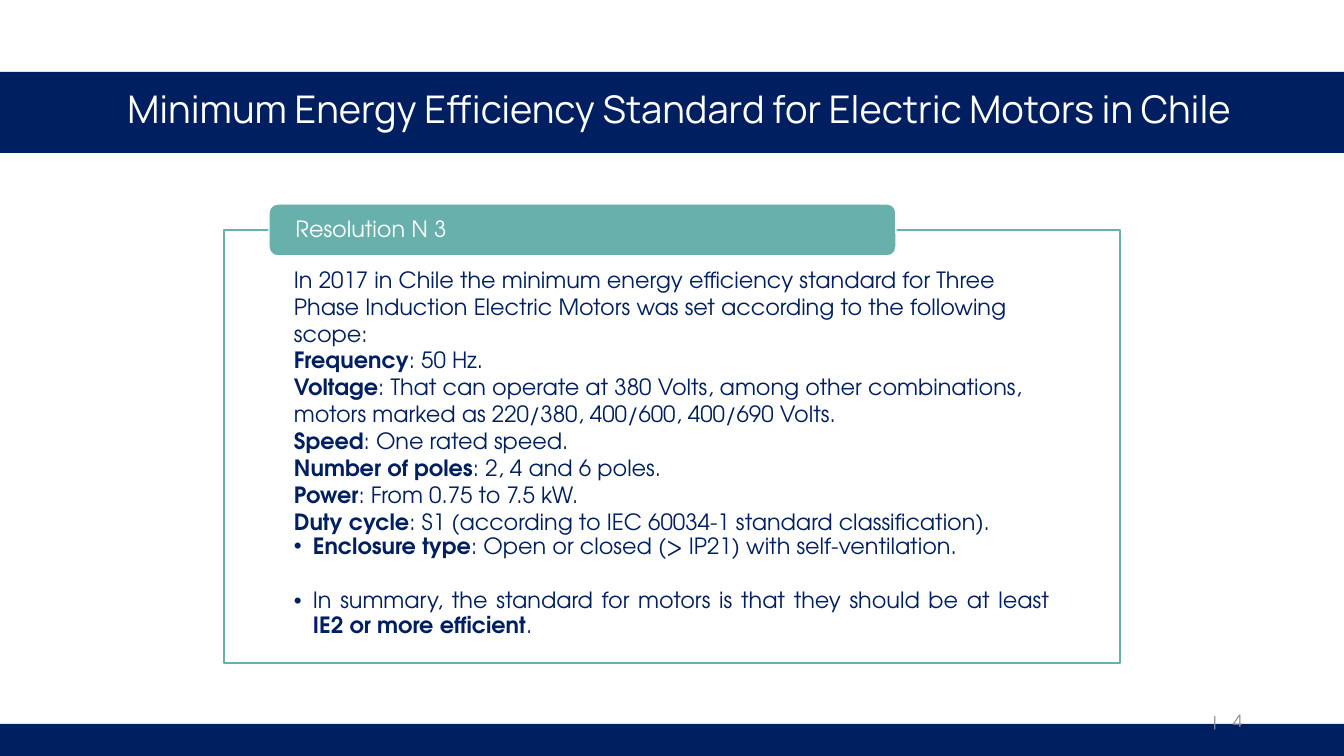
from lxml import etree
from pptx import Presentation
from pptx.dml.color import RGBColor
from pptx.enum.shapes import MSO_SHAPE
from pptx.enum.text import MSO_ANCHOR, PP_ALIGN
from pptx.oxml.ns import qn
from pptx.util import Emu, Pt

RECTANGLE, ROUNDED = MSO_SHAPE.RECTANGLE, MSO_SHAPE.ROUNDED_RECTANGLE
TOP, MIDDLE = MSO_ANCHOR.TOP, MSO_ANCHOR.MIDDLE
LEFT, CENTER, JUSTIFY = PP_ALIGN.LEFT, PP_ALIGN.CENTER, PP_ALIGN.JUSTIFY

TITLE = "Minimum Energy Efficiency Standard for Electric Motors in Chile"
HEADING = "Resolution N 3"
PAGE_NUMBER = "|\t4"
INTRO = ("In 2017 in Chile the minimum energy efficiency standard for Three Phase "
         "Induction Electric Motors was set according to the following scope:")
SCOPE = [
    ("Frequency", ": 50 Hz."),
    ("Voltage", ": That can operate at 380 Volts, among other combinations, "
                "motors marked as 220/380, 400/600, 400/690 Volts."),
    ("Speed", ": One rated speed."),
    ("Number of poles", ": 2, 4 and 6 poles."),
    ("Power", ": From 0.75 to 7.5 kW."),
    ("Duty cycle", ": S1 (according to IEC 60034-1 standard classification)."),
]
ENCLOSURE = [("Enclosure type", True),
             (": Open or closed (> IP21) with self-ventilation.", False)]
SUMMARY = [("In summary, the standard for motors is that they should be at least ", False),
           ("IE2 or more efficient", True), (".", False)]

COLORS = {"navy": "001F60", "teal": "68B0AB", "white": "FFFFFF", "gray": "8C8D9D"}
TITLE_FONT, BODY_FONT = "Manrope", "TeX Gyre Adventor"
WIDTH, HEIGHT = 1344, 756
BULLET_INDENT = 19
PAGE_TAB = 20


def px(length):
    return Emu(round(length * 914400 / 100.8))


def color(name):
    return RGBColor.from_string(COLORS[name])


def set_frame(shape, anchor, insets):
    """Wrap the text and set its anchor and left, top, right, bottom insets."""
    frame = shape.text_frame
    frame.word_wrap = True
    frame.vertical_anchor = anchor
    (frame.margin_left, frame.margin_top,
     frame.margin_right, frame.margin_bottom) = map(px, insets)
    return frame


def add_panel(slide, kind, box, fill, line=None):
    shape = slide.shapes.add_shape(kind, *map(px, box))
    shape.shadow.inherit = False
    shape.fill.solid()
    shape.fill.fore_color.rgb = color(fill)
    if line:
        shape.line.color.rgb = color(line)
        shape.line.width = Pt(1)
    else:
        shape.line.fill.background()
    return shape


def write(paragraph, runs, tint, size=16, font=BODY_FONT, align=LEFT, spacing=1.0, after=0):
    """Fill a paragraph with (text, bold) runs."""
    paragraph.alignment = align
    paragraph.line_spacing = spacing
    paragraph.space_after = Pt(after)
    for text, bold in runs:
        run = paragraph.add_run()
        run.text = text
        run.font.name = font
        run.font.size = Pt(size)
        run.font.bold = bold
        run.font.color.rgb = color(tint)


def add_bullet(paragraph):
    properties = paragraph._p.get_or_add_pPr()
    properties.set("marL", str(px(BULLET_INDENT)))
    properties.set("indent", str(-px(BULLET_INDENT)))
    etree.SubElement(properties, qn("a:buFont")).set("typeface", "Arial")
    etree.SubElement(properties, qn("a:buChar")).set("char", "•")


def add_tab_stop(paragraph, position):
    tabs = etree.SubElement(paragraph._p.get_or_add_pPr(), qn("a:tabLst"))
    tab = etree.SubElement(tabs, qn("a:tab"))
    tab.set("pos", str(px(position)))
    tab.set("algn", "l")


def add_card(slide):
    card = add_panel(slide, RECTANGLE, (224, 230, 896, 433), "white", "teal")
    frame = set_frame(card, TOP, (70, 36, 70, 12))
    write(frame.paragraphs[0], [(INTRO, False)], "navy")
    for label, value in SCOPE:
        write(frame.add_paragraph(), [(label, True), (value, False)], "navy")
    for runs, after in ((ENCLOSURE, 22), (SUMMARY, 0)):
        paragraph = frame.add_paragraph()
        add_bullet(paragraph)
        write(paragraph, runs, "navy", align=JUSTIFY, spacing=0.9, after=after)

    heading = add_panel(slide, ROUNDED, (269, 204, 627, 52), "teal", "white")
    frame = set_frame(heading, MIDDLE, (24, 0, 24, 0))
    write(frame.paragraphs[0], [(HEADING, False)], "white", spacing=0.9, after=5)


def main():
    presentation = Presentation()
    presentation.slide_width, presentation.slide_height = px(WIDTH), px(HEIGHT)
    slide = presentation.slides.add_slide(presentation.slide_layouts[6])

    add_panel(slide, RECTANGLE, (0, 724, WIDTH, HEIGHT - 724), "navy")
    title_band = add_panel(slide, RECTANGLE, (0, 72, WIDTH, 81), "navy")
    frame = set_frame(title_band, MIDDLE, (72, 5, 57, 5))
    write(frame.paragraphs[0], [(TITLE, False)], "white", 27.2, TITLE_FONT, CENTER, 0.8, 6)

    add_card(slide)

    page_box = slide.shapes.add_textbox(*map(px, (1213, 701, 48, 40)))
    paragraph = set_frame(page_box, MIDDLE, (0, 5, 0, 5)).paragraphs[0]
    add_tab_stop(paragraph, PAGE_TAB)
    write(paragraph, [(PAGE_NUMBER, False)], "gray", 12, after=6)

    presentation.save("out.pptx")


if __name__ == "__main__":
    main()
